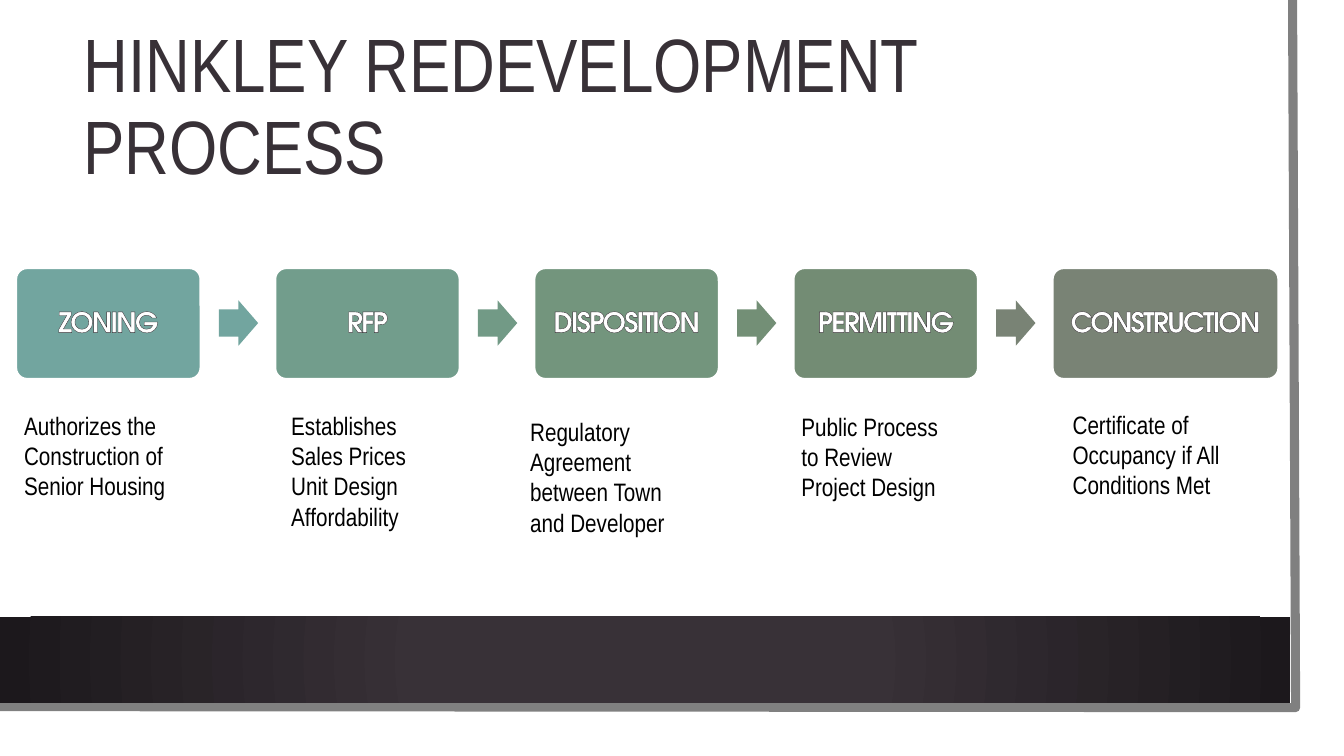
from lxml import etree
from pptx import Presentation
from pptx.dml.color import RGBColor
from pptx.enum.shapes import MSO_SHAPE as Shape
from pptx.enum.text import MSO_ANCHOR as Anchor, PP_ALIGN as Align
from pptx.oxml import parse_xml
from pptx.oxml.ns import nsdecls, qn
from pptx.util import Inches, Pt

DARK, WHITE, GREY, BLACK = "383137", "FFFFFF", "808080", "000000"
STEP_LEFT, STEP_TOP, STEP_PITCH = 0.16, 2.66, 2.57
STEP_WIDTH, STEP_HEIGHT = 1.83, 1.1
ARROW_OFFSET = 2.01

# label, box width, box colour, colour of the arrow that follows
STEPS = [
    ("ZONING", STEP_WIDTH, "72A59F", "72A59F"),
    ("RFP", STEP_WIDTH, "729D8C", "729A86"),
    ("DISPOSITION", STEP_WIDTH, "73957D", "738F76"),
    ("PERMITTING", STEP_WIDTH, "738C74", "798375"),
    ("CONSTRUCTION", 2.24, "798375", None),
]
# left, top, width, height, paragraphs
NOTES = [
    (0.14, 4.02, 2.05, 1.01, ["Authorizes the Construction of Senior Housing"]),
    (2.79, 4.02, 1.77, 1.31,
     ["Establishes Sales Prices", "Unit Design", "Affordability"]),
    (5.16, 4.08, 1.77, 1.31,
     ["Regulatory Agreement between Town and Developer"]),
    (7.85, 4.03, 1.77, 1.01, ["Public Process to Review Project Design"]),
    (10.54, 4.01, 1.97, 1.01,
     ["Certificate of Occupancy if All Conditions Met"]),
]
TITLE_FONT = {"name": "Arial Narrow", "size": Pt(54)}
NOTE_FONT = {"name": "Arial Narrow", "size": Pt(18)}
LABEL_FONT = {"name": "TeX Gyre Adventor", "size": Pt(20), "bold": True}


def color(hex_value):
    return RGBColor.from_string(hex_value)


def set_format(target, values):
    for name, value in values.items():
        setattr(target, name, value)


def add_block(slide, kind, left, top, width, height, fill, adjustments=()):
    shape = slide.shapes.add_shape(
        kind, Inches(left), Inches(top), Inches(width), Inches(height))
    shape.shadow.inherit = False
    for index, value in enumerate(adjustments):
        shape.adjustments[index] = value
    shape.fill.solid()
    shape.fill.fore_color.rgb = color(fill)
    shape.line.fill.background()
    return shape


def add_text(slide, left, top, width, height, lines, font, hex_color,
             anchor=Anchor.TOP, line_spacing=1.0):
    shape = slide.shapes.add_textbox(
        Inches(left), Inches(top), Inches(width), Inches(height))
    frame = shape.text_frame
    set_format(frame, {"word_wrap": True, "vertical_anchor": anchor})
    frame.text = "\n".join(lines)
    for paragraph in frame.paragraphs:
        paragraph.line_spacing = line_spacing
        set_format(paragraph.runs[0].font, font)
        paragraph.runs[0].font.color.rgb = color(hex_color)


def add_label(shape, text):
    frame = shape.text_frame
    inset = Inches(0.08)
    set_format(frame, {"word_wrap": True, "vertical_anchor": Anchor.MIDDLE,
                       "margin_left": inset, "margin_right": inset,
                       "margin_top": inset, "margin_bottom": inset})
    paragraph = frame.paragraphs[0]
    set_format(paragraph, {"alignment": Align.CENTER, "line_spacing": 0.9})
    run = paragraph.add_run()
    run.text = text
    set_format(run.font, LABEL_FONT)
    run.font.color.rgb = color(WHITE)
    # Tight letter spacing and a thin dark outline
    properties = run._r.get_or_add_rPr()
    properties.set("spc", "-150")
    outline = etree.Element(qn("a:ln"), w=str(Pt(0.75)))
    fill = etree.SubElement(outline, qn("a:solidFill"))
    etree.SubElement(fill, qn("a:srgbClr"), val=DARK)
    properties.insert(0, outline)


def add_frame(slide):
    # Grey edge along the right and bottom
    builder = slide.shapes.build_freeform(Inches(12.82), Inches(0))
    builder.add_line_segments(
        [(Inches(12.85), Inches(7.02)), (Inches(-0.03), Inches(7.01))],
        close=False)
    edge = builder.convert_to_shape()
    edge.shadow.inherit = False
    edge.fill.background()
    edge.line.color.rgb = color(GREY)
    edge.line.width = Pt(6.5)

    # Dark footer band with a radial gradient
    band = add_block(slide, Shape.RECTANGLE, 0, 6.12, 12.8, 0.85, DARK)
    solid = band._element.spPr.find(qn("a:solidFill"))
    solid.getparent().replace(solid, parse_xml(
        f'<a:gradFill {nsdecls("a")} rotWithShape="1"><a:gsLst>'
        f'<a:gs pos="34000"><a:srgbClr val="{DARK}"/></a:gs>'
        '<a:gs pos="100000"><a:srgbClr val="1C181C"/></a:gs></a:gsLst>'
        '<a:path path="circle"><a:fillToRect l="50000" t="50000" '
        'r="50000" b="50000"/></a:path></a:gradFill>'))


def add_step(slide, index, label, width, fill, arrow_fill):
    left = STEP_LEFT + index * STEP_PITCH
    box = add_block(slide, Shape.ROUNDED_RECTANGLE, left, STEP_TOP,
                    width, STEP_HEIGHT, fill, [0.1])
    box.line.color.rgb = color(WHITE)
    box.line.width = Pt(1.5)
    add_label(box, label)
    if arrow_fill:
        add_block(slide, Shape.RIGHT_ARROW, left + ARROW_OFFSET, 2.98,
                  0.39, 0.45, arrow_fill, [0.6, 0.5])


def main():
    presentation = Presentation()
    presentation.slide_width = Inches(13.33)
    presentation.slide_height = Inches(7.5)
    slide = presentation.slides.add_slide(presentation.slide_layouts[6])

    add_frame(slide)
    add_text(slide, 0.73, 0.45, 11.37, 1.26, ["HINKLEY REDEVELOPMENT PROCESS"],
             TITLE_FONT, DARK, Anchor.MIDDLE, 0.9)

    # Process steps and the notes below them
    for index, step in enumerate(STEPS):
        add_step(slide, index, *step)
    for *place, lines in NOTES:
        add_text(slide, *place, lines, NOTE_FONT, BLACK)

    presentation.save("out.pptx")


if __name__ == "__main__":
    main()
